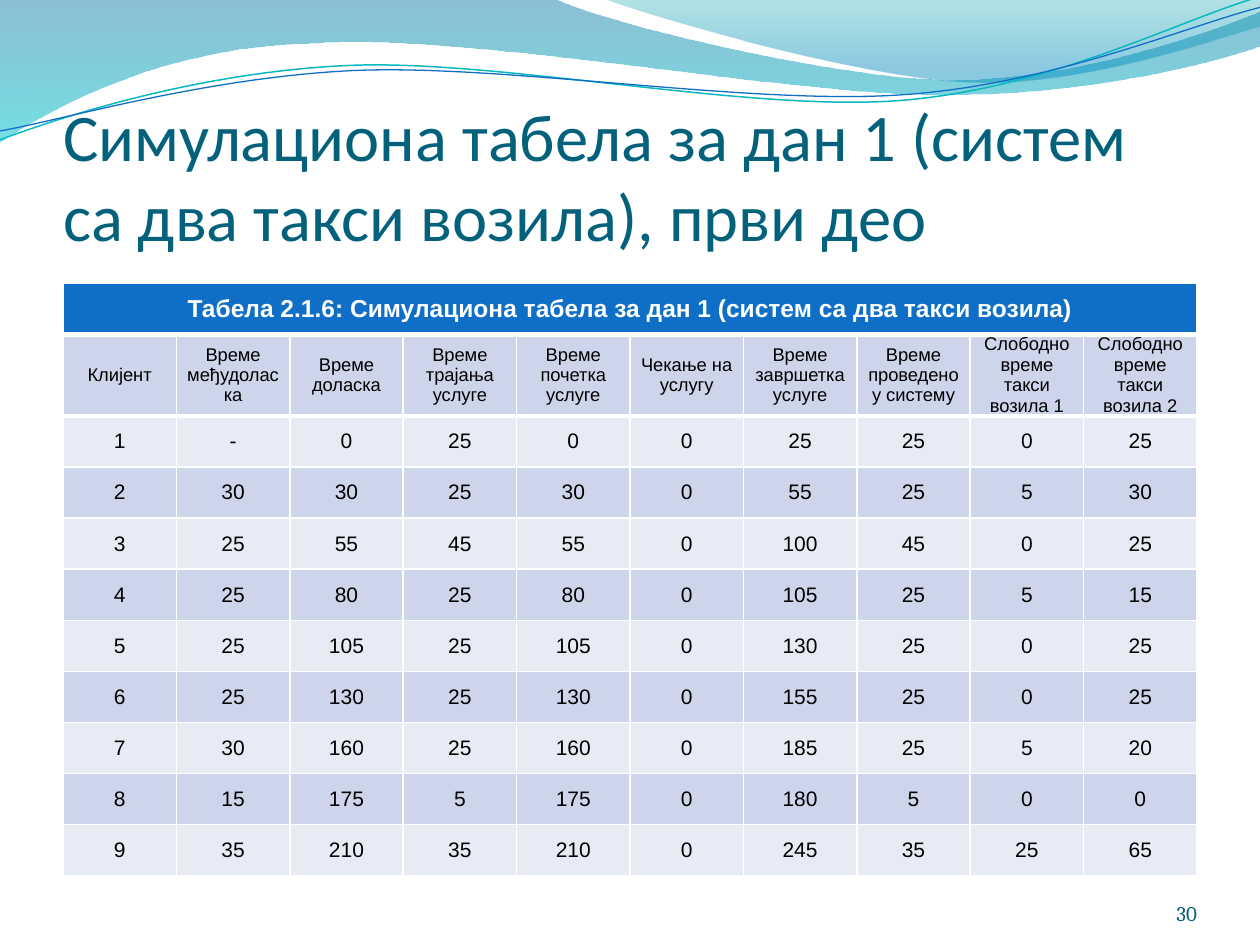
from lxml import etree
from pptx import Presentation
from pptx.dml.color import RGBColor
from pptx.enum.text import MSO_ANCHOR, MSO_AUTO_SIZE, PP_ALIGN
from pptx.oxml.ns import qn
from pptx.util import Cm, Pt

LEFT, CENTER, RIGHT = PP_ALIGN.LEFT, PP_ALIGN.CENTER, PP_ALIGN.RIGHT
MIDDLE, BOTTOM = MSO_ANCHOR.MIDDLE, MSO_ANCHOR.BOTTOM

WHITE = RGBColor(0xFF, 0xFF, 0xFF)
BLACK = RGBColor(0x00, 0x00, 0x00)
BLUE = RGBColor(0x0F, 0x6F, 0xC6)
TEAL = RGBColor(0x0A, 0xB8, 0xBF)
TITLE_COLOR = RGBColor(0x04, 0x61, 0x7B)
NUMBER_COLOR = RGBColor(0x04, 0x5D, 0x75)
BAND_DARK = RGBColor(0xCC, 0xD5, 0xEA)
BAND_LIGHT = RGBColor(0xE7, 0xEB, 0xF5)
DEEP_BLUE = RGBColor(0x00, 0x74, 0xA1)
CYAN = RGBColor(0x00, 0xC6, 0xCF)
SEA_GREEN = RGBColor(0x00, 0xA1, 0xA9)
SKY_BLUE = RGBColor(0x00, 0x8B, 0xBF)


def add_wave(shapes, start, segments, close):
    """Draw lines (2 numbers) and Bezier curves (6 numbers), all in cm."""
    builder = shapes.build_freeform(Cm(start[0]), Cm(start[1]))
    builder.add_line_segments([(Cm(seg[-2]), Cm(seg[-1])) for seg in segments], close=close)
    sp = builder.convert_to_shape()
    sp.shadow.inherit = False
    # Turn the straight segments that have control points into curves
    for line, seg in zip(list(sp._element.iter(qn("a:lnTo"))), segments):
        if len(seg) == 6:
            curve = etree.Element(qn("a:cubicBezTo"))
            for x, y in zip(seg[::2], seg[1::2]):
                etree.SubElement(curve, qn("a:pt"),
                                 x=str(Cm(x) - sp.left), y=str(Cm(y) - sp.top))
            line.getparent().replace(line, curve)
    return sp


def write_text(tf, text, align, **font):
    p = tf.paragraphs[0]
    p.alignment = align
    r = p.add_run()
    r.text = text
    r.font.color.rgb = font.pop("color")
    for name, value in font.items():
        setattr(r.font, name, value)


prs = Presentation()
prs.slide_width, prs.slide_height = Cm(25.4), Cm(19.05)
s = prs.slides.add_slide(prs.slide_layouts[5])

# Filled waves: start, segments, gradient stops (position, colour, opacity %)
filled_waves = [
    ((0, 0),
     [(11.18, -0.03), (12.09, 0.43, 16.87, 1.6, 19.25, 1.6),
      (21.67, 1.6, 24.33, 0.66, 25.4, 0.23), (25.43, 0.91),
      (24.97, 1.12, 22.1, 1.93, 18.95, 1.91), (15.8, 1.91, 9.7, 0.71, 6.53, 0.86),
      (3.28, 0.91, 1.17, 2.11, -0.03, 2.87)],
     [(0, DEEP_BLUE, 45), (1, CYAN, 55)]),
    ((12.17, -0.03),
     [(12.93, 0.28, 17.32, 1.57, 19.53, 1.65),
      (21.74, 1.75, 24.41, 0.81, 25.4, 0.53), (25.4, 0)],
     [(0, SEA_GREEN, 30), (0.8, SKY_BLUE, 45)]),
]
for start, segments, stops in filled_waves:
    sp = add_wave(s.shapes, start, segments, True)
    sp.line.fill.background()
    sp.fill.gradient()
    sp.fill.gradient_angle = 270
    for stop, (position, color, _) in zip(sp.fill.gradient_stops, stops):
        stop.position = position
        stop.color.rgb = color
    for clr, (_, _, opacity) in zip(sp._element.spPr.iter(qn("a:srgbClr")), stops):
        etree.SubElement(clr, qn("a:alpha"), val=str(opacity * 1000))

# Thin wave lines
wave_lines = [
    ((0, 2.82), [(1.22, 2.36, 4.01, 1.45, 7.04, 1.32),
                 (10.03, 1.19, 15.06, 2.26, 18.11, 2.03),
                 (21.16, 1.8, 23.83, 0.38, 25.35, -0.05)], TEAL, 0.85),
    ((0, 2.64), [(1.19, 2.44, 4.17, 1.55, 7.19, 1.42),
                 (10.24, 1.3, 15.16, 2.13, 18.21, 1.91),
                 (21.23, 1.7, 23.9, 0.53, 25.4, 0.15)], BLUE, 0.75),
]
for start, segments, color, width in wave_lines:
    sp = add_wave(s.shapes, start, segments, False)
    sp.fill.background()
    sp.line.color.rgb = color
    sp.line.width = Pt(width)

# Title, brought in front of the waves
title = s.shapes.title
s.shapes._spTree.append(title._element)
title.left, title.top, title.width, title.height = Cm(1.27), Cm(1.96), Cm(22.86), Cm(3.17)
tf = title.text_frame
box_format = {"word_wrap": True, "auto_size": MSO_AUTO_SIZE.NONE, "vertical_anchor": BOTTOM,
              "margin_left": 0, "margin_right": 0, "margin_bottom": 0}
for name, value in box_format.items():
    setattr(tf, name, value)
write_text(tf, "Симулациона табела за дан 1 (систем са два такси возила), први део",
           LEFT, size=Pt(38), name="Calibri", color=TITLE_COLOR)

# Simulation table: caption, column heads, one row per client
caption = "Табела 2.1.6: Симулациона табела за дан 1 (систем са два такси возила)"
heads = ["Клијент", "Време међудоласка", "Време доласка", "Време трајања услуге",
         "Време почетка услуге", "Чекање на услугу", "Време завршетка услуге",
         "Време проведено у систему", "Слободно време такси возила 1",
         "Слободно време такси возила 2"]
clients = [
    (1, "-", 0, 25, 0, 0, 25, 25, 0, 25),
    (2, 30, 30, 25, 30, 0, 55, 25, 5, 30),
    (3, 25, 55, 45, 55, 0, 100, 45, 0, 25),
    (4, 25, 80, 25, 80, 0, 105, 25, 5, 15),
    (5, 25, 105, 25, 105, 0, 130, 25, 0, 25),
    (6, 25, 130, 25, 130, 0, 155, 25, 0, 25),
    (7, 30, 160, 25, 160, 0, 185, 25, 5, 20),
    (8, 15, 175, 5, 175, 0, 180, 5, 0, 0),
    (9, 35, 210, 35, 210, 0, 245, 35, 25, 65),
]
rows = [[caption] + [""] * (len(heads) - 1), heads] + clients
frame = s.shapes.add_table(len(rows), len(heads), Cm(1.27), Cm(5.71),
                           Cm(22.86), Cm(1.03 * len(rows)))
table = frame.table
table.cell(0, 0).merge(table.cell(0, len(heads) - 1))
frame.height = Cm(12.09)

row_styles = [
    {"size": Pt(14), "bold": True, "color": WHITE},
    {"size": Pt(10.5), "bold": False, "color": BLACK},
] + [{"size": Pt(12), "bold": False, "color": BLACK}] * len(clients)
rules = [1, 3, 2.25] + [1] * len(clients)
cell_format = {"vertical_anchor": MIDDLE, "margin_left": Cm(0.18), "margin_right": Cm(0.18),
               "margin_top": 0, "margin_bottom": 0}
for i, values in enumerate(rows):
    for j, value in enumerate(values):
        cell = table.cell(i, j)
        for name, setting in cell_format.items():
            setattr(cell, name, setting)
        borders = {"a:lnL": 1, "a:lnR": 1, "a:lnT": rules[i], "a:lnB": rules[i + 1]}
        for tag, width in borders.items():
            ln = etree.SubElement(cell._tc.get_or_add_tcPr(), qn(tag), w=str(Pt(width)))
            fill = etree.SubElement(ln, qn("a:solidFill"))
            etree.SubElement(fill, qn("a:srgbClr"), val=str(WHITE))
        cell.fill.solid()
        cell.fill.fore_color.rgb = BLUE if i == 0 else BAND_DARK if i % 2 else BAND_LIGHT
        if value != "":
            write_text(cell.text_frame, str(value), CENTER, name="Arial", **row_styles[i])

# Slide number
tf = s.shapes.add_textbox(Cm(22.02), Cm(17.65), Cm(2.11), Cm(1.02)).text_frame
for name, value in {**box_format, "margin_top": 0}.items():
    setattr(tf, name, value)
write_text(tf, "30", RIGHT, size=Pt(12), name="Cambria", color=NUMBER_COLOR)

prs.save("out.pptx")
